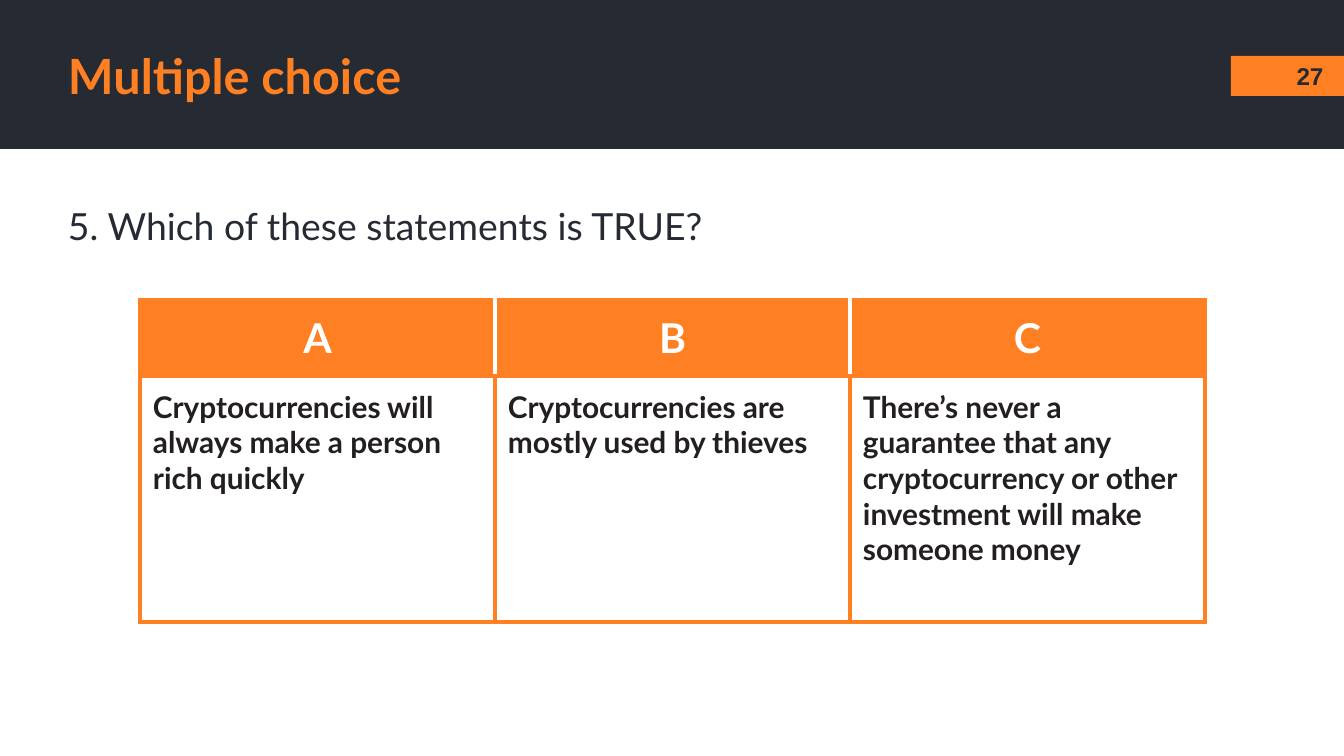
from lxml import etree
from pptx import Presentation
from pptx.dml.color import RGBColor
from pptx.enum.shapes import MSO_SHAPE
from pptx.enum.text import MSO_ANCHOR, PP_ALIGN
from pptx.oxml.ns import qn
from pptx.util import Emu, Pt

EMU_PER_PX = 914400 / 134.4
WIDTH, HEIGHT = 1344, 756
INSET = 13
BORDER = Pt(2.25)

DARK = RGBColor(0x26, 0x2A, 0x33)
ORANGE = RGBColor(0xFF, 0x80, 0x22)
WHITE = RGBColor(0xFF, 0xFF, 0xFF)
INK = RGBColor(0x23, 0x1F, 0x20)

RECT = MSO_SHAPE.RECTANGLE
TOP, MIDDLE = MSO_ANCHOR.TOP, MSO_ANCHOR.MIDDLE
LEFT, CENTER = PP_ALIGN.LEFT, PP_ALIGN.CENTER

ANSWERS = {
    "A": "Cryptocurrencies will always make a person rich quickly",
    "B": "Cryptocurrencies are mostly used by thieves",
    "C": "There’s never a guarantee that any cryptocurrency or other "
         "investment will make someone money",
}


def px(n):
    return Emu(round(n * EMU_PER_PX))


class SlideBuilder:
    def __init__(self, slide, font="Lato"):
        self.s = slide
        self.font = font

    def bar(self, x, y, w, h, color):
        sp = self.s.shapes.add_shape(RECT, px(x), px(y), px(w), px(h))
        sp.shadow.inherit = False
        sp.fill.solid()
        sp.fill.fore_color.rgb = color
        sp.line.fill.background()

    def add_run(self, tf, text, size, color, bold=True, align=LEFT, font=None):
        p = tf.paragraphs[0]
        p.alignment = align
        r = p.add_run()
        r.text = text
        r.font.name = font or self.font
        r.font.size = Pt(size)
        r.font.bold = bold
        r.font.color.rgb = color

    def text(self, x, y, w, h, text, size, color, anchor=MIDDLE, **style):
        tf = self.s.shapes.add_textbox(px(x), px(y), px(w), px(h)).text_frame
        tf.word_wrap = True
        tf.vertical_anchor = anchor
        tf.margin_left = tf.margin_right = px(INSET)
        tf.margin_top = tf.margin_bottom = px(INSET)
        self.add_run(tf, text, size, color, **style)

    def borders(self, cell, colors):
        """Draw the cell's left, right, top and bottom edges in these colours."""
        tc_pr = cell._tc.get_or_add_tcPr()
        for i, (side, color) in enumerate(zip("LRTB", colors)):
            ln = etree.Element(qn(f"a:ln{side}"), w=str(BORDER))
            fill = etree.SubElement(ln, qn("a:solidFill"))
            etree.SubElement(fill, qn("a:srgbClr"), val=str(color))
            tc_pr.insert(i, ln)

    def cell(self, cell, text, size, color, fill, edges, align=LEFT):
        cell.margin_left = cell.margin_right = px(INSET)
        cell.margin_top = cell.margin_bottom = px(INSET)
        cell.fill.solid()
        cell.fill.fore_color.rgb = fill
        self.borders(cell, edges)
        self.add_run(cell.text_frame, text, size, color, align=align)

    def answer_table(self, x, y, col_w, row_heights, answers):
        n = len(answers)
        table = self.s.shapes.add_table(
            2, n, px(x), px(y), px(col_w * n), px(sum(row_heights))).table
        for row, h in zip(table.rows, row_heights):
            row.height = px(h)
        for i, (letter, answer) in enumerate(answers.items()):
            table.columns[i].width = px(col_w)
            left = ORANGE if i == 0 else WHITE
            right = ORANGE if i == n - 1 else WHITE
            self.cell(table.cell(0, i), letter, 22, WHITE, ORANGE,
                      (left, right, ORANGE, ORANGE), CENTER)
            self.cell(table.cell(1, i), answer, 16, INK, WHITE, (ORANGE,) * 4)


def main():
    prs = Presentation()
    prs.slide_width, prs.slide_height = px(WIDTH), px(HEIGHT)
    b = SlideBuilder(prs.slides.add_slide(prs.slide_layouts[6]))

    b.bar(0, 0, WIDTH, 149, DARK)
    b.bar(1231, 56, 113, 40, ORANGE)
    b.text(55, 190, 1126, 172, "5. Which of these statements is TRUE?", 20,
           DARK, anchor=TOP, bold=False)
    b.text(55, 38, 1175, 75, "Multiple choice", 26, ORANGE)
    b.answer_table(140, 300, 355, (76, 246), ANSWERS)
    b.text(1275, 59, 70, 34, "27", 13, DARK, align=CENTER, font="Arial")

    prs.save("out.pptx")


if __name__ == "__main__":
    main()
